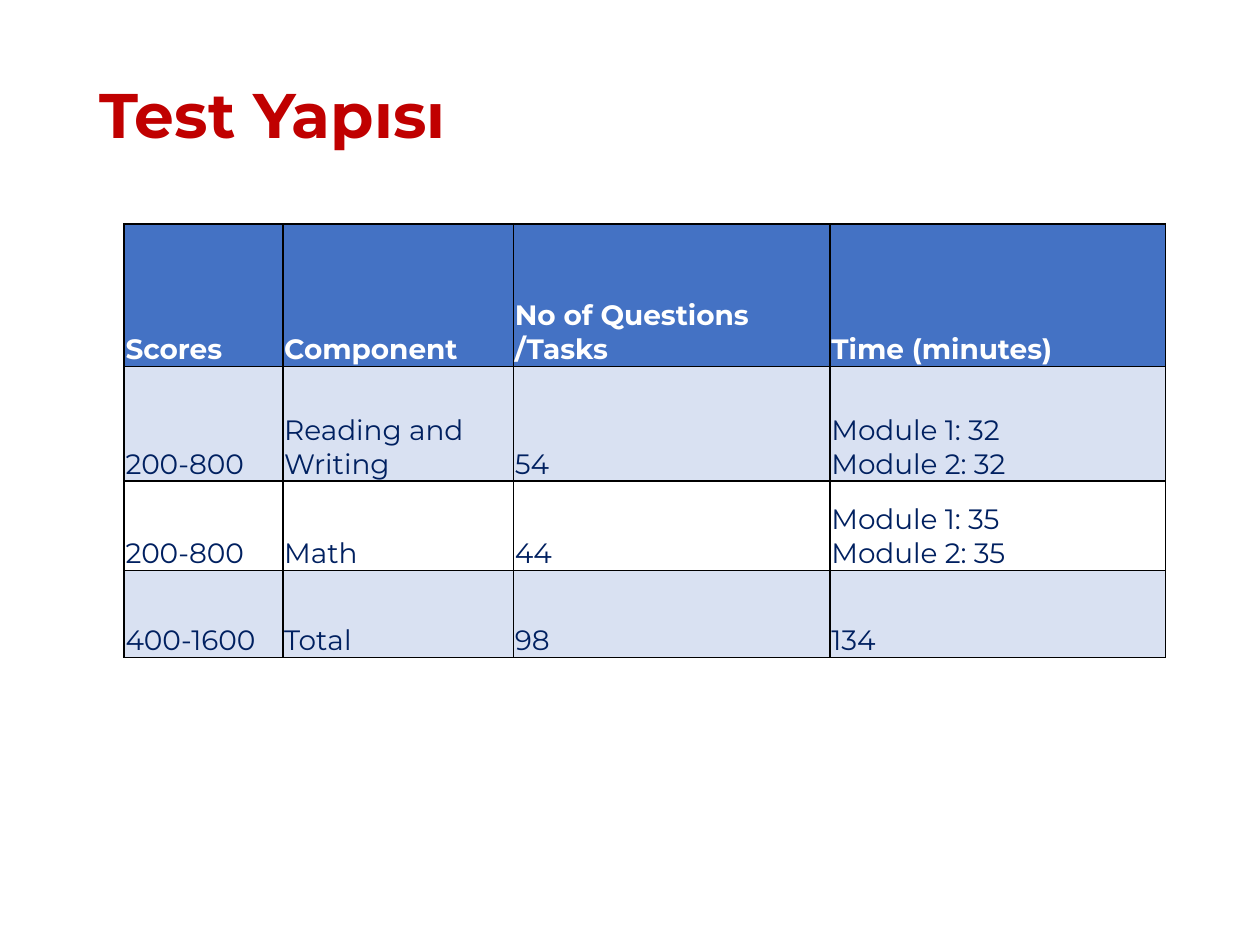
import pptx
import pptx.dml.color
import pptx.enum.text
import pptx.oxml.ns
import pptx.util
from lxml import etree
from pptx.util import Cm

RGB = pptx.dml.color.RGBColor
RED = RGB(0xC0, 0x00, 0x00)
NAVY = RGB(0x00, 0x20, 0x60)
BLUE = RGB(0x44, 0x72, 0xC4)
PALE = RGB(0xD9, 0xE1, 0xF2)
WHITE = RGB(0xFF, 0xFF, 0xFF)
BLACK = RGB(0x00, 0x00, 0x00)

FONT = "Montserrat"
WIDTHS = [3.2, 4.65, 6.38, 6.76]
HEIGHTS = [2.87, 2.31, 1.8, 1.75]
ROWS = [
    ["Scores", "Component", "No of Questions /Tasks", "Time (minutes)"],
    ["200-800", "Reading and Writing", "54", "Module 1: 32\nModule 2: 32"],
    ["200-800", "Math", "44", "Module 1: 35\nModule 2: 35"],
    ["400-1600", "Total", "98", "134"],
]


def style(frame, size, color, bold):
    for para in frame.paragraphs:
        para.alignment = pptx.enum.text.PP_ALIGN.LEFT
        for run in para.runs:
            run.font.name = FONT
            run.font.size = pptx.util.Pt(size)
            run.font.bold = bold
            run.font.color.rgb = color


def add_title(slide, text):
    title = slide.shapes.title
    title.left, title.top = Cm(1.75), Cm(1.02)
    title.width, title.height = Cm(21.9), Cm(2.72)
    frame = title.text_frame
    frame.text = text
    frame.vertical_anchor = pptx.enum.text.MSO_ANCHOR.MIDDLE
    frame.paragraphs[0].line_spacing = 0.9
    style(frame, 36, RED, True)


def add_border(cell):
    """Draw a thin line on all four sides; call before the fill is set."""
    qn = pptx.oxml.ns.qn
    props = cell._tc.get_or_add_tcPr()
    for side in ("lnL", "lnR", "lnT", "lnB"):
        line = etree.SubElement(props, qn("a:" + side), w=str(pptx.util.Pt(1)))
        fill = etree.SubElement(line, qn("a:solidFill"))
        etree.SubElement(fill, qn("a:srgbClr"), val=str(BLACK))


def fill_cell(cell, text, row):
    head = row == 0
    cell.text_frame.text = text
    cell.vertical_anchor = pptx.enum.text.MSO_ANCHOR.BOTTOM
    cell.margin_left = cell.margin_right = cell.margin_top = Cm(0.03)
    cell.margin_bottom = 0
    style(cell.text_frame, 16, WHITE if head else NAVY, head)
    add_border(cell)
    cell.fill.solid()
    cell.fill.fore_color.rgb = BLUE if head else PALE if row % 2 else WHITE


def add_grid(slide):
    table = slide.shapes.add_table(
        len(ROWS), len(WIDTHS), Cm(2.5), Cm(4.52),
        Cm(sum(WIDTHS)), Cm(sum(HEIGHTS))).table
    for col, width in zip(table.columns, WIDTHS):
        col.width = Cm(width)
    for row, height in zip(table.rows, HEIGHTS):
        row.height = Cm(height)
    for r, texts in enumerate(ROWS):
        for c, text in enumerate(texts):
            fill_cell(table.cell(r, c), text, r)


def main():
    deck = pptx.Presentation()
    deck.slide_width, deck.slide_height = Cm(25.4), Cm(19.05)
    slide = deck.slides.add_slide(deck.slide_layouts[5])
    add_title(slide, "Test Yapısı")
    add_grid(slide)
    deck.save("out.pptx")


if __name__ == "__main__":
    main()
